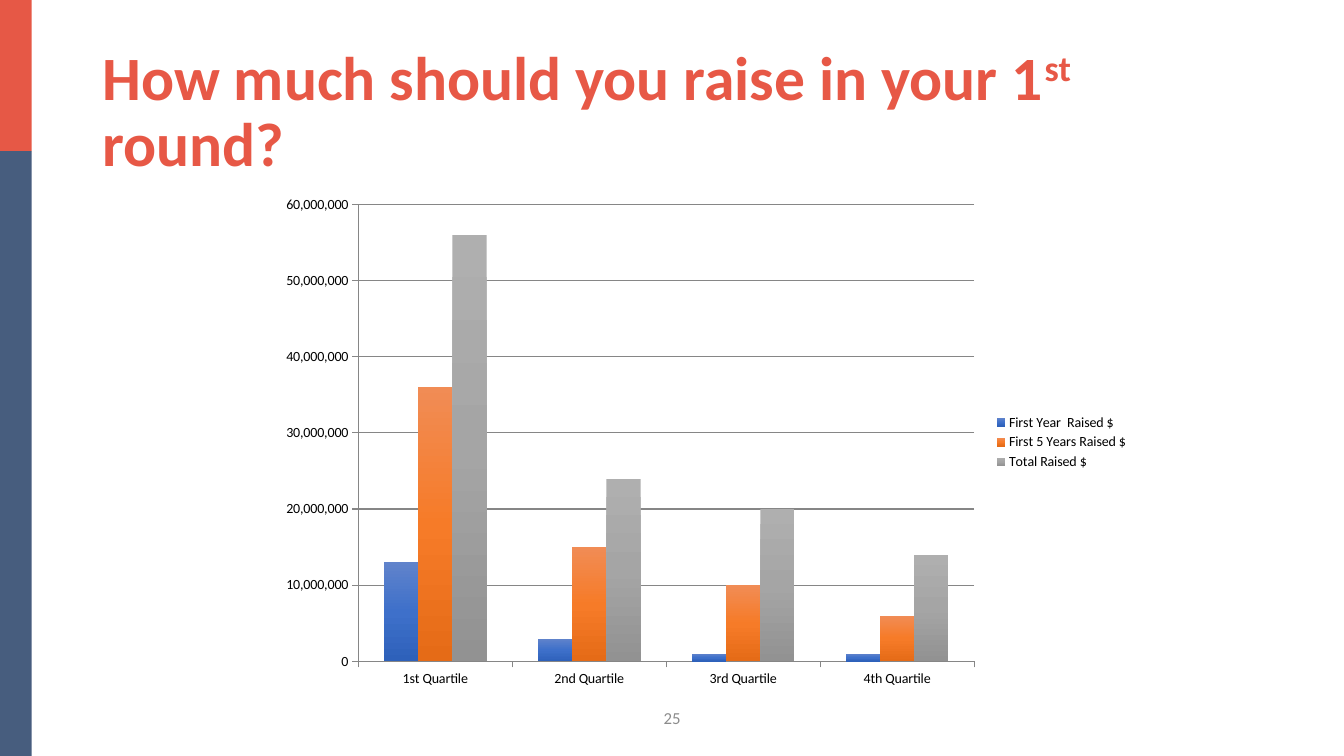
import copy
from dataclasses import dataclass

from lxml import etree
from pptx import Presentation
from pptx import util as u
from pptx.chart import data as chart_data
from pptx.dml.color import RGBColor
from pptx.enum import chart as charts, shapes, text
from pptx.oxml import ns

CORAL = RGBColor(0xE6, 0x58, 0x46)
TITLE_CORAL = RGBColor(0xE7, 0x58, 0x46)
SLATE = RGBColor(0x47, 0x5D, 0x7E)
PAGE_GRAY = RGBColor(0x8C, 0x8C, 0x8C)
AXIS_GRAY = RGBColor(0x86, 0x86, 0x86)
BLACK = RGBColor(0, 0, 0)
BLUES = (RGBColor(0x60, 0x83, 0xCB), RGBColor(0x3E, 0x70, 0xCA), RGBColor(0x2E, 0x61, 0xBA))
ORANGES = (RGBColor(0xF1, 0x8C, 0x55), RGBColor(0xF6, 0x7B, 0x28), RGBColor(0xE5, 0x6B, 0x17))
GRAYS = (RGBColor(0xAF, 0xAF, 0xAF), RGBColor(0xA5, 0xA5, 0xA5), RGBColor(0x92, 0x92, 0x92))
FONT = "Calibri"
SUPERSCRIPT = "30000"
MILLION = 1_000_000


@dataclass(frozen=True)
class Area:
    left: float
    top: float
    width: float
    height: float

    def lengths(self) -> tuple:
        return tuple(u.Cm(v) for v in (self.left, self.top, self.width, self.height))


@dataclass(frozen=True)
class Band:
    area: Area
    color: RGBColor


@dataclass(frozen=True)
class Raised:
    name: str
    millions: tuple
    colors: tuple


BANDS = (
    Band(Area(0, 0, 0.8, 3.81), CORAL),
    Band(Area(0, 3.81, 0.8, 15.24), SLATE),
)
TITLE_AREA = Area(2.33, 1.02, 29.21, 3.68)
NUMBER_AREA = Area(13.13, 17.58, 7.62, 1.01)
CHART_AREA = Area(6.78, 4.7, 21.92, 12.88)
PLOT_AREA = Area(9.03, 5.15, 15.52, 11.52)
QUARTILES = ("1st Quartile", "2nd Quartile", "3rd Quartile", "4th Quartile")
SERIES = (
    Raised("First Year  Raised $", (13, 3, 1, 1), BLUES),
    Raised("First 5 Years Raised $", (36, 15, 10, 6), ORANGES),
    Raised("Total Raised $", (56, 24, 20, 14), GRAYS),
)
TITLE_FORMAT = {"name": FONT, "size": u.Pt(44), "bold": True}
NUMBER_FORMAT = {"name": FONT, "size": u.Pt(12)}
CHART_FORMAT = {"name": FONT, "size": u.Pt(10)}


def set_format(target, values: dict) -> None:
    for name, value in values.items():
        setattr(target, name, value)


def add_band(page, band: Band) -> None:
    box = page.shapes.add_shape(shapes.MSO_SHAPE.RECTANGLE, *band.area.lengths())
    box.shadow.inherit = False
    box.fill.solid()
    box.fill.fore_color.rgb = band.color
    box.line.fill.background()


def add_text(page, area: Area, spans: tuple, font_format: dict,
             color: RGBColor, para_format: dict) -> None:
    """Add one paragraph; each span is its text and its baseline shift or None."""
    frame = page.shapes.add_textbox(*area.lengths()).text_frame
    set_format(frame, {"word_wrap": True, "vertical_anchor": text.MSO_ANCHOR.MIDDLE})
    para = frame.paragraphs[0]
    set_format(para, para_format)
    for words, baseline in spans:
        span = para.add_run()
        span.text = words
        set_format(span.font, font_format)
        span.font.color.rgb = color
        if baseline:
            span._r.get_or_add_rPr().set("baseline", baseline)


def set_plot_layout(chart, outer: Area, inner: Area) -> None:
    """Fix the inner plot area as fractions of the chart."""
    plot_area = chart.plots[0]._element.getparent()
    for old in plot_area.findall(ns.qn("c:layout")):
        plot_area.remove(old)
    layout = etree.Element(ns.qn("c:layout"))
    manual = etree.SubElement(layout, ns.qn("c:manualLayout"))
    settings = {
        "layoutTarget": "inner", "xMode": "edge", "yMode": "edge",
        "x": (inner.left - outer.left) / outer.width,
        "y": (inner.top - outer.top) / outer.height,
        "w": inner.width / outer.width,
        "h": inner.height / outer.height,
    }
    for tag, value in settings.items():
        etree.SubElement(manual, ns.qn(f"c:{tag}")).set("val", str(value))
    plot_area.insert(0, layout)


def fill_downward(series, colors: tuple) -> None:
    """Fill with an even gradient of the three colours from top to bottom."""
    fill = series.format.fill
    fill.gradient()
    fill.gradient_angle = 270
    first = series._element.find(".//" + ns.qn("a:gs"))
    first.addnext(copy.deepcopy(first))
    for index, (stop, color) in enumerate(zip(fill.gradient_stops, colors)):
        stop.position = index / (len(colors) - 1)
        stop.color.rgb = color


def style_line(line) -> None:
    line.color.rgb = AXIS_GRAY
    line.width = u.Pt(0.75)


def add_raised_chart(page) -> None:
    data = chart_data.CategoryChartData(number_format="#,##0")
    data.categories = QUARTILES
    for raised in SERIES:
        data.add_series(raised.name, [v * MILLION for v in raised.millions])
    chart = page.shapes.add_chart(
        charts.XL_CHART_TYPE.COLUMN_CLUSTERED, *CHART_AREA.lengths(), data).chart
    set_format(chart, {"has_title": False, "has_legend": True})
    set_format(chart.font, CHART_FORMAT)
    chart.font.color.rgb = BLACK
    set_format(chart.legend, {"position": charts.XL_LEGEND_POSITION.RIGHT,
                              "include_in_layout": False})
    set_format(chart.plots[0], {"gap_width": 150, "overlap": 0,
                                "vary_by_categories": False})
    for series, raised in zip(chart.plots[0].series, SERIES):
        fill_downward(series, raised.colors)

    for axis in (chart.category_axis, chart.value_axis):
        axis.major_tick_mark = charts.XL_TICK_MARK.OUTSIDE
        style_line(axis.format.line)
    set_format(chart.value_axis, {"minimum_scale": 0, "maximum_scale": 60 * MILLION,
                                  "major_unit": 10 * MILLION,
                                  "has_major_gridlines": True})
    set_format(chart.value_axis.tick_labels,
               {"number_format": "#,##0", "number_format_is_linked": False})
    style_line(chart.value_axis.major_gridlines.format.line)
    set_plot_layout(chart, CHART_AREA, PLOT_AREA)


def main() -> None:
    deck = Presentation()
    set_format(deck, {"slide_width": u.Cm(33.87), "slide_height": u.Cm(19.05)})
    page = deck.slides.add_slide(deck.slide_layouts[6])
    for band in BANDS:
        add_band(page, band)
    title = (("How much should you raise in your 1", None),
             ("st", SUPERSCRIPT), (" round?", None))
    add_text(page, TITLE_AREA, title, TITLE_FORMAT, TITLE_CORAL, {"line_spacing": 0.9})
    add_text(page, NUMBER_AREA, (("25", None),), NUMBER_FORMAT, PAGE_GRAY,
             {"alignment": text.PP_ALIGN.CENTER})
    add_raised_chart(page)
    deck.save("out.pptx")


if __name__ == "__main__":
    main()
